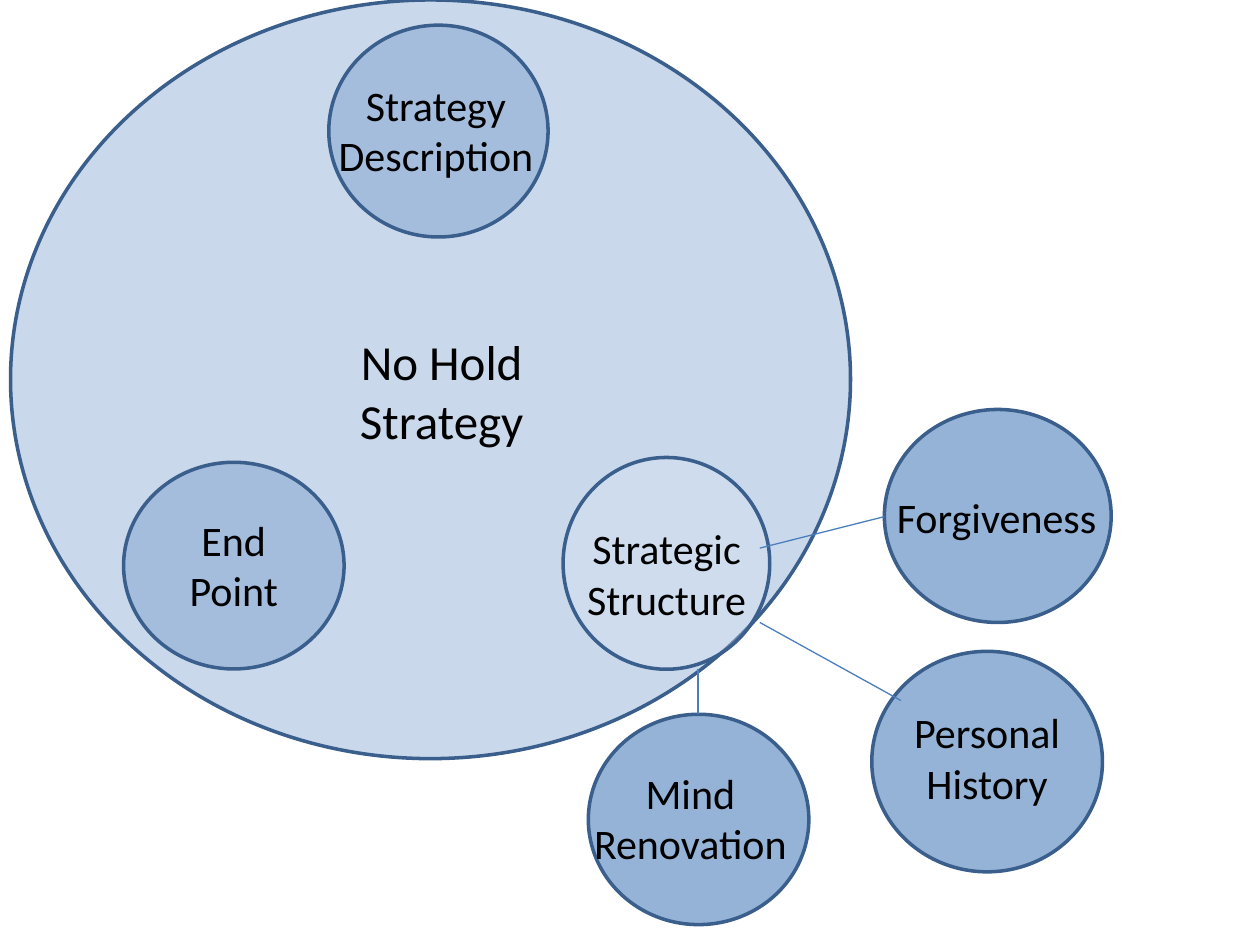
"""Build a strategy map of circles with linked outer topics."""
import dataclasses

import lxml.etree
import pptx
import pptx.dml.color
import pptx.enum.shapes
import pptx.enum.text
import pptx.oxml.ns
import pptx.util

Pt = pptx.util.Pt
Align = pptx.enum.text.PP_ALIGN


@dataclasses.dataclass(frozen=True)
class Theme:
    font: str = "Calibri"
    text: str = "000000"
    blue: str = "4F81BD"
    pale: str = "DCE6F2"
    solid: str = "95B3D7"
    outline: str = "3A5F8C"
    link: str = "4B7EBC"
    title_size: float = 28
    label_size: float = 24
    outline_width: float = 2
    link_width: float = 0.75
    opacity: int = 30


THEME = Theme()

STRATEGY = (6, 0, 480, 433.5)
STRATEGY_LABEL = (198, 185.8, 108.7, 74.9)

INNER_TOPICS = [
    ("Strategy\nDescription", THEME.blue, (187.9, 14.4, 125.3, 121), (185.8, 41.8, 126.7, 65.5)),
    ("Strategic\nStructure", THEME.pale, (321.8, 261.4, 118.1, 121), (327.6, 295.2, 106.6, 65.5)),
    ("End\nPoint", THEME.blue, (70.6, 264.2, 126, 118.1), (100.8, 290.2, 65.5, 65.5)),
]

OUTER_TOPICS = [
    ("Forgiveness", Align.LEFT, (505.4, 234, 129.6, 121.7), (505.4, 277.2, 129.6, 36)),
    ("Personal\nHistory", Align.CENTER, (498.2, 372.2, 131.8, 126), (514.8, 400.3, 98.6, 65.5)),
    ("Mind\nRenovation", Align.CENTER, (336.2, 408.2, 126, 120.2), (327.6, 434.9, 133.9, 65.5)),
]

LINKS = [
    (505.4, 295.2, 434.2, 313.2),
    (514.8, 400.3, 434.2, 355.7),
    (398.9, 408.2, 398.9, 382.3),
]


def color(value):
    return pptx.dml.color.RGBColor.from_string(value)


def points(lengths):
    return [Pt(length) for length in lengths]


def add_circle(slide, frame, fill, opacity=100):
    circle = slide.shapes.add_shape(pptx.enum.shapes.MSO_SHAPE.OVAL, *points(frame))
    circle.shadow.inherit = False
    circle.fill.solid()
    circle.fill.fore_color.rgb = color(fill)
    circle.line.color.rgb = color(THEME.outline)
    circle.line.width = Pt(THEME.outline_width)
    if opacity < 100:
        qn = pptx.oxml.ns.qn
        tint = circle.element.spPr.find(qn("a:solidFill")).find(qn("a:srgbClr"))
        lxml.etree.SubElement(tint, qn("a:alpha"), val=str(opacity * 1000))


def add_label(slide, frame, text, size=THEME.label_size, align=Align.CENTER):
    box = slide.shapes.add_textbox(*points(frame))
    box.text_frame.text = text
    box.text_frame.word_wrap = False
    box.text_frame.auto_size = pptx.enum.text.MSO_AUTO_SIZE.SHAPE_TO_FIT_TEXT
    for para in box.text_frame.paragraphs:
        para.alignment = align
        for span in para.runs:
            span.font.name = THEME.font
            span.font.size = Pt(size)
            span.font.color.rgb = color(THEME.text)


def add_link(slide, ends):
    link = slide.shapes.add_connector(pptx.enum.shapes.MSO_CONNECTOR.STRAIGHT, *points(ends))
    link.line.color.rgb = color(THEME.link)
    link.line.width = Pt(THEME.link_width)
    lxml.etree.SubElement(link.element.spPr, pptx.oxml.ns.qn("a:effectLst"))


def main():
    deck = pptx.Presentation()
    deck.slide_width, deck.slide_height = points((720, 540))
    slide = deck.slides.add_slide(deck.slide_layouts[6])

    add_circle(slide, STRATEGY, THEME.blue, THEME.opacity)
    add_label(slide, STRATEGY_LABEL, "No Hold\nStrategy", THEME.title_size)
    for text, fill, circle, label in INNER_TOPICS:
        add_circle(slide, circle, fill, THEME.opacity)
        add_label(slide, label, text)
    for text, align, circle, label in OUTER_TOPICS:
        add_circle(slide, circle, THEME.solid)
        add_label(slide, label, text, align=align)
    for ends in LINKS:
        add_link(slide, ends)

    deck.save("out.pptx")


if __name__ == "__main__":
    main()
